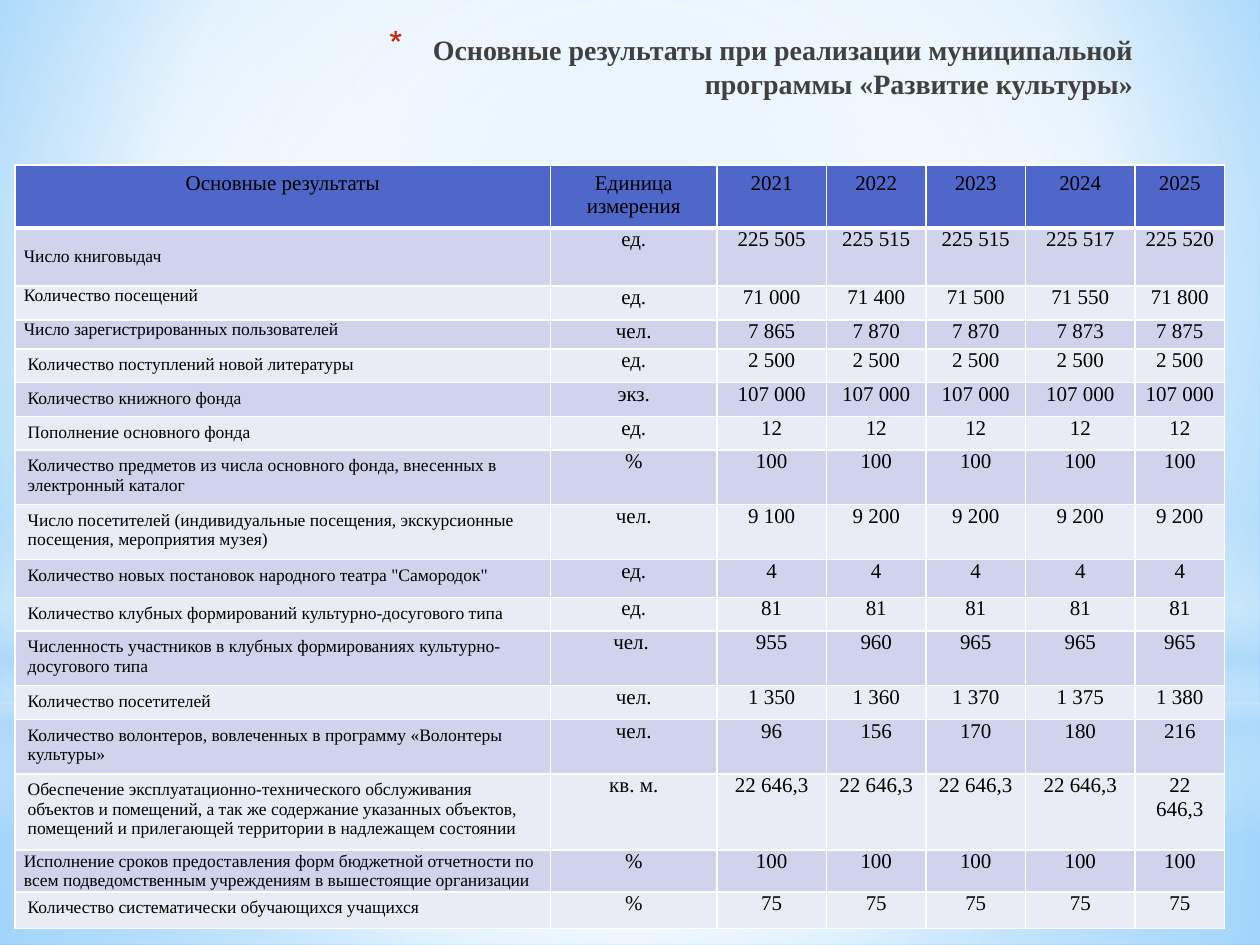
"""Build the slide with the results table of the culture development programme."""
import pptx
import pptx.dml.color
import pptx.enum.shapes
import pptx.enum.text
import pptx.oxml
import pptx.oxml.ns
import pptx.util
from pptx.util import Inches

COLORS = {"header": "4E67C8", "odd": "D0D3EB", "even": "E9EBF5", "white": "FFFFFF",
          "text": "000000", "title": "404040", "bullet": "C3260C", "navy": "212745",
          "sky": "B4DCFA", "background": "9ED5FF", "edge": "5BB9FF"}
FONT = "Times New Roman"
TITLE = "Основные результаты при реализации муниципальной программы «Развитие культуры»"
CENTER = (50, 50, 50, 50)
BACKGROUND_STOPS = [(0, "background", 100), (60, "white", 100), (100, "edge", 100)]
TITLE_STOPS = [(0, "text", 100), (40, "title", 100), (100, "navy", 65)]
GLOWS = [
    ("RECTANGLE", (0, 5.58, 10, 1.92),
     [(0, "white", 91), (37, "white", 76), (100, "sky", 79)], CENTER),
    ("RECTANGLE", (0, 0, 10, 5.58),
     [(0, "white", 89), (48, "white", 62), (100, "sky", 79)], CENTER),
    ("RECTANGLE", (0, 4.12, 10, 2.5),
     [(0, "white", 0), (29, "white", 30), (45, "sky", 40),
      (55, "white", 26), (65, "sky", 60), (100, "white", 0)], None),
    ("OVAL", (0, 1.75, 10, 5.58), [(0, "white", 100), (56, "white", 0)], CENTER),
]
HEADER = ["Основные результаты", "Единица измерения", "2021", "2022", "2023", "2024", "2025"]
TABLE_BOX = (0.12, 1.31, 9.61, 6.05)
COLUMN_WIDTHS = [4.25, 1.32, 0.87, 0.79, 0.79, 0.87, 0.71]
HEADER_HEIGHT = 0.34
ROWS = [
    (0.46, "Число книговыдач", "ед.", ["225 505", "225 515", "225 515", "225 517", "225 520"]),
    (0.27, "Количество посещений", "ед.", ["71 000", "71 400", "71 500", "71 550", "71 800"]),
    (0.23, "Число зарегистрированных пользователей", "чел.",
     ["7 865", "7 870", "7 870", "7 873", "7 875"]),
    (0.26, "Количество поступлений новой литературы", "ед.", ["2 500"] * 5),
    (0.21, "Количество книжного фонда", "экз.", ["107 000"] * 5),
    (0.24, "Пополнение основного фонда", "ед.", ["12"] * 5),
    (0.35, "Количество предметов из числа основного фонда, внесенных в электронный каталог",
     "%", ["100"] * 5),
    (0.39, "Число посетителей (индивидуальные посещения, экскурсионные посещения, "
     "мероприятия музея)", "чел.", ["9 100"] + ["9 200"] * 4),
    (0.3, 'Количество новых постановок народного театра "Самородок"', "ед.", ["4"] * 5),
    (0.24, "Количество клубных формирований культурно-досугового типа", "ед.", ["81"] * 5),
    (0.43, "Численность участников в клубных формированиях культурно-досугового типа",
     "чел. ", ["955", "960", "965", "965", "965"]),
    (0.15, "Количество посетителей", "чел.", ["1 350", "1 360", "1 370", "1 375", "1 380"]),
    (0.42, "Количество волонтеров, вовлеченных в программу «Волонтеры культуры»", "чел.",
     ["96", "156", "170", "180", "216"]),
    (0.29, "Обеспечение эксплуатационно-технического обслуживания объектов и помещений, "
     "а так же содержание указанных объектов, помещений и прилегающей территории "
     "в надлежащем состоянии", "кв. м.", ["22 646,3"] * 5),
    (0.29, "Исполнение сроков предоставления форм бюджетной отчетности по всем "
     "подведомственным учреждениям в вышестоящие организации", "%", ["100"] * 5),
    (0.29, "Количество систематически обучающихся учащихся", "%", ["75"] * 5),
]
TIGHT_LABEL_ROWS = {1, 2, 3, 15}
MIDDLE_LABEL_ROWS = {1, 15}
TIGHT_MARGINS = {"margin_left": Inches(0.07), "margin_right": Inches(0.07),
                 "margin_top": 0, "margin_bottom": 0}
ALIGN = pptx.enum.text.PP_ALIGN


def rgb(name):
    return pptx.dml.color.RGBColor.from_string(COLORS[name])


def apply_format(target, values):
    for name, value in values.items():
        setattr(target, name, value)


def parse_drawing(xml):
    tag_end = min(xml.index(mark) for mark in " />" if mark in xml)
    return pptx.oxml.parse_xml(f"{xml[:tag_end]} {pptx.oxml.ns.nsdecls('a')}{xml[tag_end:]}")


def replace_with_gradient(parent, stops, focus):
    stop_xml = "".join(
        f'<a:gs pos="{position * 1000}"><a:srgbClr val="{COLORS[color]}">'
        f'<a:alpha val="{opacity * 1000}"/></a:srgbClr></a:gs>'
        for position, color, opacity in stops)
    if focus:
        sides = " ".join(f'{side}="{value * 1000}"' for side, value in zip("ltrb", focus))
        direction = f'<a:path path="circle"><a:fillToRect {sides}/></a:path>'
    else:
        direction = '<a:lin ang="5400000" scaled="0"/>'
    gradient = parse_drawing(
        f'<a:gradFill rotWithShape="1"><a:gsLst>{stop_xml}</a:gsLst>{direction}</a:gradFill>')
    solid = parent.find(pptx.oxml.ns.qn("a:solidFill"))
    parent.replace(solid, gradient)


def add_backdrop(slide):
    fill = slide.background.fill
    fill.solid()
    fill.fore_color.rgb = rgb("background")
    background = slide.element.find(".//" + pptx.oxml.ns.qn("p:bgPr"))
    replace_with_gradient(background, BACKGROUND_STOPS, (20, 10, 20, 60))
    for kind, box, stops, focus in GLOWS:
        shape_type = getattr(pptx.enum.shapes.MSO_SHAPE, kind)
        shape = slide.shapes.add_shape(shape_type, *map(Inches, box))
        shape.shadow.inherit = False
        shape.line.fill.background()
        shape.fill.solid()
        replace_with_gradient(shape.element.spPr, stops, focus)


def add_title(slide):
    shape = slide.shapes.add_textbox(*map(Inches, (2.24, 0.21, 6.85, 1.03)))
    shape.text_frame.word_wrap = True
    paragraph = shape.text_frame.paragraphs[0]
    paragraph.alignment = ALIGN.RIGHT
    run = paragraph.add_run()
    run.text = TITLE
    apply_format(run.font, {"name": FONT, "size": pptx.util.Pt(16), "bold": True})
    run.font.color.rgb = rgb("title")
    replace_with_gradient(run.font._element, TITLE_STOPS, None)
    properties = paragraph._p.get_or_add_pPr()
    properties.set("marL", str(Inches(0.35)))
    properties.set("indent", str(-Inches(0.35)))
    for xml in (f'<a:buClr><a:srgbClr val="{COLORS["bullet"]}"/></a:buClr>',
                '<a:buSzPct val="128000"/>', '<a:buChar char="*"/>'):
        properties.append(parse_drawing(xml))


def set_borders(cell, bottom_width):
    properties = cell._tc.get_or_add_tcPr()
    for index, side in enumerate("LRTB"):
        width = pptx.util.Pt(bottom_width if side == "B" else 1)
        properties.insert(index, parse_drawing(
            f'<a:ln{side} w="{width}"><a:solidFill><a:srgbClr val="{COLORS["white"]}"/>'
            f'</a:solidFill></a:ln{side}>'))


def fill_cell(cell, text, row, column):
    is_label = row > 0 and column == 0
    cell.text = text
    paragraph = cell.text_frame.paragraphs[0]
    paragraph.alignment = ALIGN.LEFT if is_label else ALIGN.CENTER
    font = paragraph.runs[0].font
    apply_format(font, {"name": FONT, "size": pptx.util.Pt(10 if is_label else 12),
                        "bold": False})
    font.color.rgb = rgb("text")
    if row > 0 and (not is_label or row in TIGHT_LABEL_ROWS):
        apply_format(cell, TIGHT_MARGINS)
    if is_label and row in MIDDLE_LABEL_ROWS:
        cell.vertical_anchor = pptx.enum.text.MSO_ANCHOR.MIDDLE
    cell.fill.solid()
    cell.fill.fore_color.rgb = rgb("header" if row == 0 else "odd" if row % 2 else "even")
    set_borders(cell, 3 if row == 0 else 1)


def add_results_table(slide):
    lines = [HEADER] + [[label, unit, *values] for _, label, unit, values in ROWS]
    heights = [HEADER_HEIGHT] + [row[0] for row in ROWS]
    frame = slide.shapes.add_table(len(lines), len(HEADER), *map(Inches, TABLE_BOX))
    table = frame.table
    for column, width in zip(table.columns, COLUMN_WIDTHS):
        column.width = Inches(width)
    for row, height in zip(table.rows, heights):
        row.height = Inches(height)
    frame.height = Inches(TABLE_BOX[3])
    for row, line in enumerate(lines):
        for column, text in enumerate(line):
            fill_cell(table.cell(row, column), text, row, column)


def main():
    presentation = pptx.Presentation()
    apply_format(presentation, {"slide_width": Inches(10), "slide_height": Inches(7.5)})
    slide = presentation.slides.add_slide(presentation.slide_layouts[6])
    add_backdrop(slide)
    add_title(slide)
    add_results_table(slide)
    presentation.save("out.pptx")


if __name__ == "__main__":
    main()
